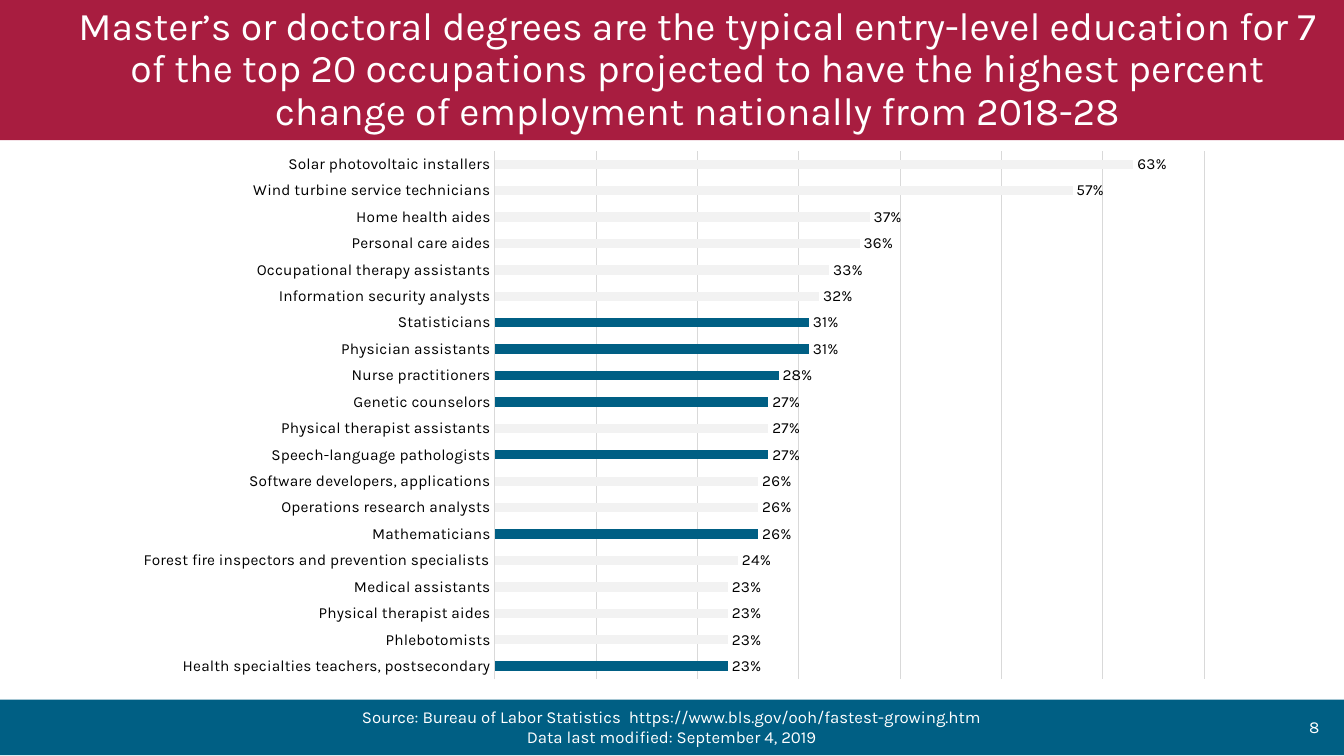
from lxml import etree
from pptx import Presentation
from pptx import util as u
from pptx.chart import data as chart_data
from pptx.dml.color import RGBColor
from pptx.enum import chart as charts, shapes, text
from pptx.oxml import ns

CRIMSON = RGBColor(0xA8, 0x1D, 0x40)
TEAL = RGBColor(0x00, 0x5F, 0x84)
PALE_GREY = RGBColor(0xF2, 0xF2, 0xF2)
GRID_GREY = RGBColor(0xD9, 0xD9, 0xD9)
WHITE = RGBColor(0xFF, 0xFF, 0xFF)
BLACK = RGBColor(0, 0, 0)

# Occupation, percent change, graduate degree typically required
OCCUPATIONS = [
    ("Solar photovoltaic installers", 63, False),
    ("Wind turbine service technicians", 57, False),
    ("Home health aides", 37, False),
    ("Personal care aides", 36, False),
    ("Occupational therapy assistants", 33, False),
    ("Information security analysts", 32, False),
    ("Statisticians", 31, True),
    ("Physician assistants", 31, True),
    ("Nurse practitioners", 28, True),
    ("Genetic counselors", 27, True),
    ("Physical therapist assistants", 27, False),
    ("Speech-language pathologists", 27, True),
    ("Software developers, applications", 26, False),
    ("Operations research analysts", 26, False),
    ("Mathematicians", 26, True),
    ("Forest fire inspectors and prevention specialists", 24, False),
    ("Medical assistants", 23, False),
    ("Physical therapist aides", 23, False),
    ("Phlebotomists", 23, False),
    ("Health specialties teachers, postsecondary", 23, True),
]


class SlideBuilder:
    font_name = "Karla"

    def __init__(self, slide):
        self.slide = slide

    def style(self, font, size, color):
        font.name = self.font_name
        font.size = u.Pt(size)
        font.color.rgb = color

    def fill_text(self, box, words, size, align):
        frame = box.text_frame
        frame.word_wrap = True
        frame.vertical_anchor = text.MSO_ANCHOR.MIDDLE
        frame.text = words
        for para in frame.paragraphs:
            para.alignment = align
            for span in para.runs:
                self.style(span.font, size, WHITE)

    def band(self, top, height, color):
        band = self.slide.shapes.add_shape(
            shapes.MSO_SHAPE.RECTANGLE, 0, u.Cm(top), u.Cm(33.87), u.Cm(height))
        band.shadow.inherit = False
        band.fill.solid()
        band.fill.fore_color.rgb = color
        band.line.fill.background()
        return band

    def label(self, left, top, width, height, words, align):
        box = self.slide.shapes.add_textbox(
            u.Cm(left), u.Cm(top), u.Cm(width), u.Cm(height))
        self.fill_text(box, words, 12, align)

    def bar_chart(self, left, top, width, height, rows):
        data = chart_data.CategoryChartData(number_format="0%")
        data.categories = [name for name, _, _ in rows]
        data.add_series("Series 1", [percent / 100 for _, percent, _ in rows])
        chart = self.slide.shapes.add_chart(
            charts.XL_CHART_TYPE.BAR_CLUSTERED, u.Cm(left), u.Cm(top),
            u.Cm(width), u.Cm(height), data).chart
        chart.has_legend = False
        chart.has_title = False
        self.style(chart.font, 11, BLACK)

        # Axes
        names = chart.category_axis
        names.major_tick_mark = charts.XL_TICK_MARK.NONE
        names.format.line.color.rgb = GRID_GREY
        names.format.line.width = u.Pt(0.75)
        self.style(names.tick_labels.font, 11, BLACK)
        values = chart.value_axis
        values.visible = False
        values.minimum_scale, values.maximum_scale = 0, 0.7
        values.major_unit = 0.1
        values.has_major_gridlines = True
        values.major_gridlines.format.line.color.rgb = GRID_GREY
        values.major_gridlines.format.line.width = u.Pt(0.75)

        # Bars, with graduate-level occupations highlighted
        plot = chart.plots[0]
        plot.gap_width = 182
        plot.vary_by_categories = False
        series = plot.series[0]
        series.invert_if_negative = False
        series.format.fill.solid()
        series.format.fill.fore_color.rgb = PALE_GREY
        for index, (_, _, graduate) in enumerate(rows):
            if graduate:
                fill = series.points[index].format.fill
                fill.solid()
                fill.fore_color.rgb = TEAL
        labels = series.data_labels
        labels.show_value = True
        labels.number_format = "0%"
        labels.number_format_is_linked = False
        labels.position = charts.XL_LABEL_POSITION.OUTSIDE_END
        self.style(labels.font, 11, BLACK)
        self.place_plot(chart, x=0.34, y=0.02, w=0.64, h=0.96)

    def place_plot(self, chart, **fractions):
        area = chart.element.find(".//" + ns.qn("c:plotArea"))
        for old in area.findall(ns.qn("c:layout")):
            area.remove(old)
        layout = etree.Element(ns.qn("c:layout"))
        manual = etree.SubElement(layout, ns.qn("c:manualLayout"))
        settings = {"layoutTarget": "inner", "xMode": "edge", "yMode": "edge", **fractions}
        for tag, value in settings.items():
            etree.SubElement(manual, ns.qn("c:" + tag)).set("val", str(value))
        area.insert(0, layout)


def main():
    deck = Presentation()
    deck.slide_width, deck.slide_height = u.Cm(33.87), u.Cm(19.05)
    page = SlideBuilder(deck.slides.add_slide(deck.slide_layouts[6]))
    center, right = text.PP_ALIGN.CENTER, text.PP_ALIGN.RIGHT

    # Footer
    page.band(17.63, 1.4, TEAL)
    page.label(8.38, 17.83, 17.1, 0.97,
               "Source: Bureau of Labor Statistics  https://www.bls.gov/ooh/fastest-growing.htm\n"
               "Data last modified: September 4, 2019", center)
    page.label(25.88, 17.81, 7.62, 1.02, "8", right)

    # Title
    title = page.band(0, 3.53, CRIMSON)
    page.fill_text(title, "Master’s or doctoral degrees are the typical entry-level education for 7 "
                   "of the top 20 occupations projected to have the highest percent "
                   "change of employment nationally from 2018-28", 28, center)
    heading = title.text_frame.paragraphs[0]
    heading.line_spacing = 0.9
    heading._p.get_or_add_pPr().set("marL", str(u.Cm(1.27)))

    # Chart, listed from the bottom up
    page.bar_chart(2.97, 3.53, 27.94, 13.87, OCCUPATIONS[::-1])

    deck.save("out.pptx")


if __name__ == "__main__":
    main()
